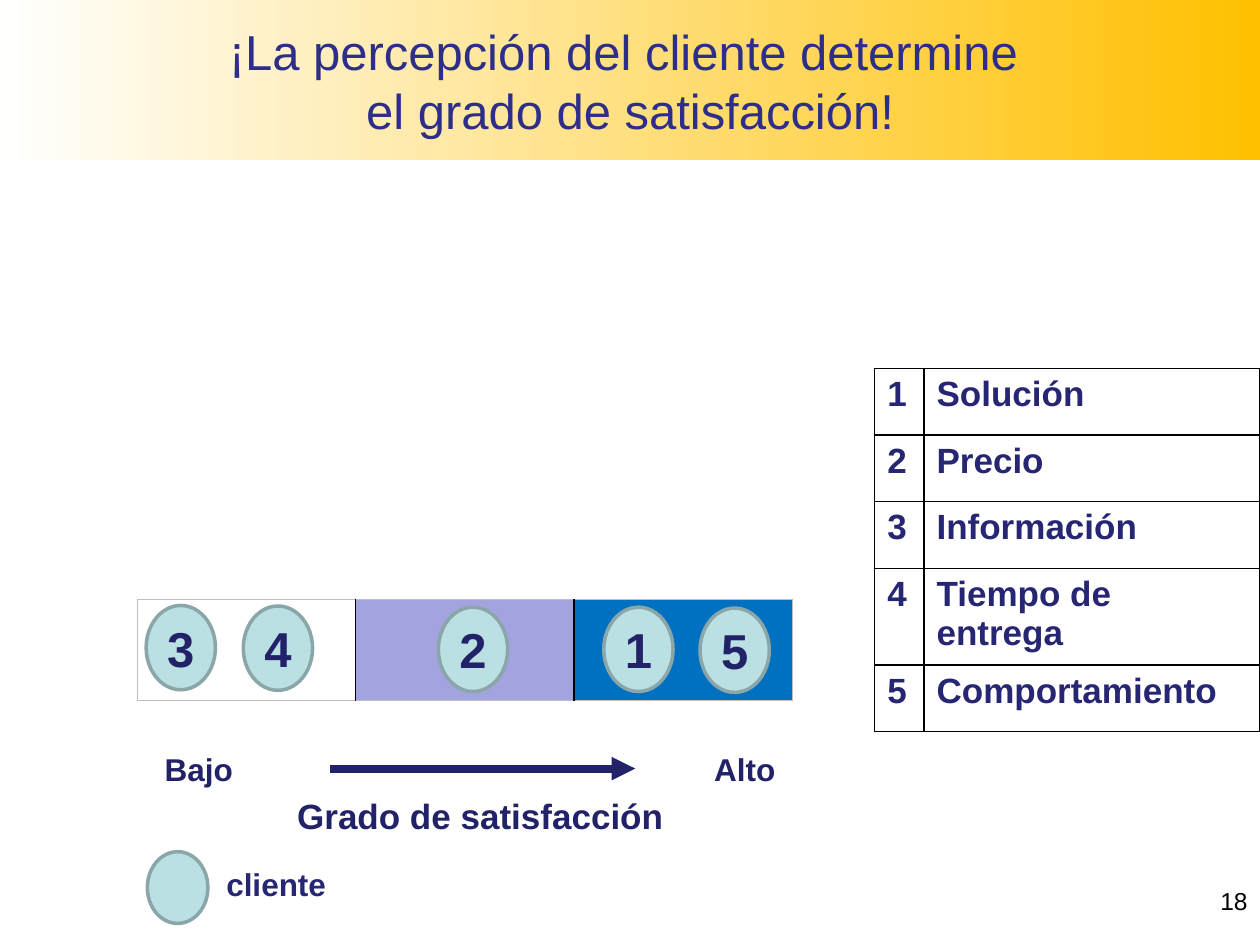
from lxml import etree
from pptx import Presentation
from pptx.dml.color import RGBColor
from pptx.enum import shapes, text
from pptx.oxml import ns
from pptx.util import Pt

FONT = "Arial"
NAVY, INK = "222268", "262673"
BUBBLE, BUBBLE_EDGE = "BBE0E3", "8AA6A8"
SCALE_LEFT, SCALE_TOP, SCALE_HEIGHT, ZONE_WIDTH = 78.5, 342.7, 57.6, 124.8
LEGEND_ROW = 38.1
CRITERIA = ["Solución", "Precio", "Información", "Tiempo de entrega", "Comportamiento"]
# Criterion number and the place of its bubble on the scale
RATINGS = [("3", 83.5, 346), ("4", 139, 346.3), ("2", 250.5, 347),
           ("1", 345, 347), ("5", 400, 347.5)]


def color(hex_code):
    return RGBColor.from_string(hex_code)


def format_text(frame, size, hex_code, bold=True, align=None):
    for paragraph in frame.paragraphs:
        if align is not None:
            paragraph.alignment = align
        for run in paragraph.runs:
            run.font.name, run.font.size, run.font.bold = FONT, Pt(size), bold
            run.font.color.rgb = color(hex_code)


def add_banner(slide, wording):
    banner = slide.shapes.title
    banner.left, banner.top, banner.width, banner.height = Pt(0), Pt(0), Pt(720), Pt(91.5)
    banner.fill.gradient()
    banner.fill.gradient_angle = 0
    for stop, (position, hex_code) in zip(banner.fill.gradient_stops,
                                          [(0, "FFFFFF"), (1, "FFC000")]):
        stop.position = position
        stop.color.rgb = color(hex_code)
    frame = banner.text_frame
    frame.text = wording
    frame.auto_size = text.MSO_AUTO_SIZE.NONE
    frame.vertical_anchor = text.MSO_ANCHOR.MIDDLE
    format_text(frame, 28, "2D2D8A", False, text.PP_ALIGN.CENTER)


def add_label(slide, wording, left, top, width, height, size,
              hex_code=NAVY, bold=True, wrap=False, align=None):
    label = slide.shapes.add_textbox(Pt(left), Pt(top), Pt(width), Pt(height))
    label.text_frame.text = wording
    label.text_frame.word_wrap = wrap
    format_text(label.text_frame, size, hex_code, bold, align)


def add_bubble(slide, left, top, width, height, digit=""):
    bubble = slide.shapes.add_shape(shapes.MSO_SHAPE.OVAL,
                                    Pt(left), Pt(top), Pt(width), Pt(height))
    bubble.shadow.inherit = False
    bubble.fill.solid()
    bubble.fill.fore_color.rgb = color(BUBBLE)
    bubble.line.color.rgb = color(BUBBLE_EDGE)
    bubble.line.width = Pt(2)
    if digit:
        frame = bubble.text_frame
        frame.margin_left = frame.margin_right = frame.margin_top = frame.margin_bottom = 0
        frame.vertical_anchor = text.MSO_ANCHOR.MIDDLE
        frame.text = digit
        format_text(frame, 28, NAVY, align=text.PP_ALIGN.CENTER)


def add_plain_table(slide, left, top, widths, heights):
    table = slide.shapes.add_table(len(heights), len(widths), Pt(left), Pt(top),
                                   Pt(sum(widths)), Pt(sum(heights))).table
    table.first_row = table.horz_banding = False
    for column, width in zip(table.columns, widths):
        column.width = Pt(width)
    for row, height in zip(table.rows, heights):
        row.height = Pt(height)
    return table


def style_cell(cell, fill=None, **edges):
    """Set the fill, and a one-point border per edge (lnL, lnR, lnT, lnB)."""
    if fill:
        cell.fill.solid()
        cell.fill.fore_color.rgb = color(fill)
    else:
        cell.fill.background()
    properties = cell._tc.get_or_add_tcPr()
    for place, edge in enumerate(("lnL", "lnR", "lnT", "lnB")):
        border = etree.Element(ns.qn("a:" + edge), w=str(Pt(1)))
        solid = etree.SubElement(border, ns.qn("a:solidFill"))
        etree.SubElement(solid, ns.qn("a:srgbClr"), val=edges.get(edge, "000000"))
        properties.insert(place, border)


def add_scale(slide):
    zones = ["FFFFFF", "A3A3E0", "0070C0"]
    scale = add_plain_table(slide, SCALE_LEFT, SCALE_TOP,
                            [ZONE_WIDTH] * len(zones), [SCALE_HEIGHT])
    outer = "BFBFBF"
    for i, fill in enumerate(zones):
        edges = {"lnT": outer, "lnB": outer}
        if i == 0:
            edges["lnL"] = outer
        if i == len(zones) - 1:
            edges["lnR"] = outer
        style_cell(scale.cell(0, i), fill, **edges)


def add_criteria(slide):
    heights = [LEGEND_ROW] * len(CRITERIA)
    heights[3] = 55  # two lines of text
    criteria = add_plain_table(slide, 499.8, 210.5, [28.2, 192], heights)
    for i, criterion in enumerate(CRITERIA):
        for j, wording in enumerate((str(i + 1), criterion)):
            cell = criteria.cell(i, j)
            cell.text = wording
            format_text(cell.text_frame, 20, INK)
            style_cell(cell)
        cell.margin_right = Pt(10)


def add_arrow(slide, start, end, y):
    arrow = slide.shapes.add_connector(shapes.MSO_CONNECTOR.STRAIGHT,
                                       Pt(start), Pt(y), Pt(end), Pt(y))
    arrow.line.color.rgb = color(NAVY)
    arrow.line.width = Pt(4.5)
    etree.SubElement(arrow.line._get_or_add_ln(), ns.qn("a:tailEnd"), type="triangle")
    etree.SubElement(arrow._element.spPr, ns.qn("a:effectLst"))


def main():
    deck = Presentation()
    deck.slide_width, deck.slide_height = Pt(720), Pt(540)
    slide = deck.slides.add_slide(deck.slide_layouts[5])

    add_banner(slide, "¡La percepción del cliente determine \vel grado de satisfacción!")

    # Satisfaction scale with its axis
    add_scale(slide)
    add_label(slide, "Grado de satisfacción", 162.7, 450.7, 265.7, 31.7, 20, wrap=True)
    add_label(slide, "Bajo", 87, 424.8, 53.3, 28.8, 18)
    add_label(slide, "Alto", 401, 424.8, 49.7, 28.8, 18)

    # Key to the bubbles
    add_bubble(slide, 84.2, 486.7, 34.6, 41)
    add_label(slide, "cliente", 122.2, 490.5, 71.3, 28.8, 18, INK)

    # Slide number
    add_label(slide, "18", 552, 502.5, 168, 37.5, 14, "000000", False, True,
              text.PP_ALIGN.RIGHT)

    # Criteria and where the customer rates them
    add_criteria(slide)
    for digit, left, top in RATINGS:
        add_bubble(slide, left, top, 39.6, 48.2, digit)
    add_arrow(slide, 188.6, 363, 439.2)

    deck.save("out.pptx")


if __name__ == "__main__":
    main()
